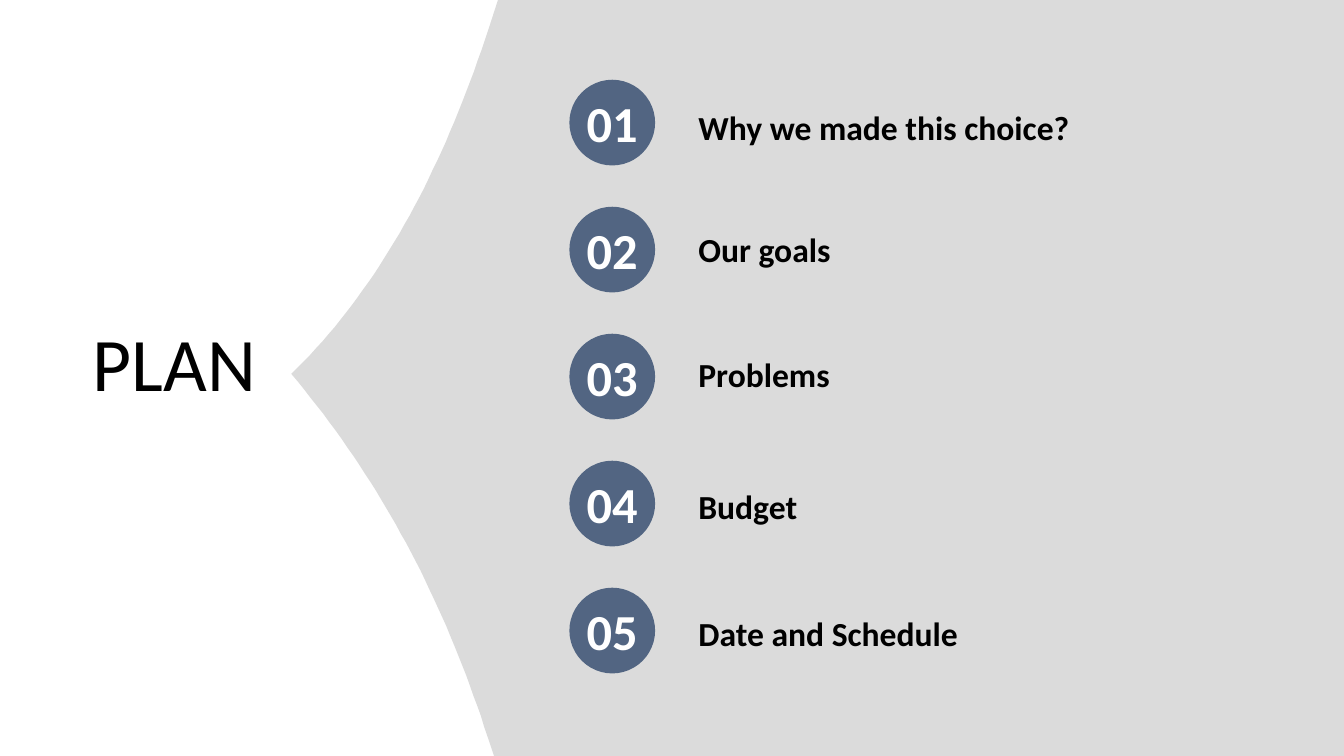
from dataclasses import dataclass

from lxml.etree import SubElement
from pptx import Presentation
from pptx.dml.color import RGBColor
from pptx.enum.shapes import MSO_SHAPE as Shape
from pptx.enum.text import MSO_ANCHOR as Anchor, MSO_AUTO_SIZE as Fit, PP_ALIGN as Align
from pptx.oxml.ns import qn
from pptx.util import Cm, Pt

Point = tuple[float, float]


@dataclass(frozen=True)
class Theme:
    font: str = "Calibri"
    ink: str = "000000"
    light: str = "FFFFFF"
    panel: str = "DBDBDB"
    badge: str = "526582"
    title: float = 54
    number: float = 36
    label: float = 24
    leading: float = 1.22  # line height of the font, in ems


@dataclass(frozen=True)
class Step:
    label: str
    top: float  # top of the label, in cm


THEME = Theme()
WIDTH, HEIGHT = 33.87, 19.05
STEPS = [
    Step("Why we made this choice?", 2.57),
    Step("Our goals", 5.66),
    Step("Problems", 8.81),
    Step("Budget", 12.17),
    Step("Date and Schedule", 15.39),
]
BADGE_LEFT, BADGE_TOP, BADGE_SIZE, PITCH = 14.35, 2.01, 2.16, 3.2


def place(shape, left: float, top: float, width: float, height: float) -> None:
    shape.left, shape.top = Cm(left), Cm(top)
    shape.width, shape.height = Cm(width), Cm(height)


def style(para, size: float, color: str, bold: bool, align: Align) -> None:
    para.alignment = align
    for run in para.runs:
        font = run.font
        font.name, font.size, font.bold = THEME.font, Pt(size), bold
        font.color.rgb = RGBColor.from_string(color)


def paint(shape, color: str) -> None:
    shape.shadow.inherit = False
    shape.fill.solid()
    shape.fill.fore_color.rgb = RGBColor.from_string(color)
    shape.line.fill.background()


def curve(a: Point, b: Point, c: Point, d: Point, count: int = 40) -> list[Point]:
    """Points along a cubic Bezier curve, without its start."""
    points = []
    for i in range(1, count + 1):
        t = i / count
        u = 1 - t
        mix = (u**3, 3 * u * u * t, 3 * u * t * t, t**3)
        points.append(tuple(sum(m * p[k] for m, p in zip(mix, (a, b, c, d))) for k in (0, 1)))
    return points


def add_panel(slide) -> None:
    low, tip, high = (12.29, 18.57), (7.34, 9.42), (12.32, 0.71)
    points = [(12.55, 0), (WIDTH, 0), (WIDTH, HEIGHT), (12.45, HEIGHT), low]
    points += curve(low, (11.15, 15.04), (9.58, 12.09), tip)
    points += curve(tip, (9.5, 7.34), (11.13, 4.37), high)
    grid = [(x * 100, y * 100) for x, y in points]
    build = slide.shapes.build_freeform(*grid[0], scale=Cm(0.01))
    build.add_line_segments(grid[1:], close=True)
    panel = build.convert_to_shape()
    paint(panel, THEME.panel)
    panel.element.getparent().insert(2, panel.element)  # send to back


def add_title(slide) -> None:
    title = slide.shapes.title
    place(title, 2.08, 7.82, 9.7, 2.57)
    frame = title.text_frame
    frame.text = "PLAN"
    frame.auto_size, frame.vertical_anchor = Fit.NONE, Anchor.MIDDLE
    style(frame.paragraphs[0], THEME.title, THEME.ink, False, Align.LEFT)


def add_list(slide, steps: list[Step]) -> None:
    body = slide.placeholders[1]
    place(body, 17.3, steps[0].top, 14.22, 14.1)
    frame = body.text_frame
    frame.text = "\n".join(step.label for step in steps)
    frame.auto_size, frame.vertical_anchor = Fit.NONE, Anchor.TOP
    frame.margin_left = frame.margin_right = Cm(0.3)
    frame.margin_top = frame.margin_bottom = Cm(0.13)
    line = THEME.label * THEME.leading
    last = None
    for para, step in zip(frame.paragraphs, steps):
        gap = Cm(step.top - last.top).pt - line if last else 0
        para.space_before, para.space_after = Pt(gap), Pt(0)
        para.line_spacing = 1.0
        style(para, THEME.label, THEME.ink, True, Align.LEFT)
        props = para._p.get_or_add_pPr()
        props.set("marL", "0")
        props.set("indent", "0")
        SubElement(props, qn("a:buNone"))
        last = step


def add_badge(slide, index: int) -> None:
    size = Cm(BADGE_SIZE)
    badge = slide.shapes.add_shape(
        Shape.OVAL, Cm(BADGE_LEFT), Cm(BADGE_TOP + index * PITCH), size, size)
    paint(badge, THEME.badge)
    frame = badge.text_frame
    frame.text = f"{index + 1:02}"
    frame.word_wrap, frame.vertical_anchor = False, Anchor.MIDDLE
    frame.margin_left = frame.margin_right = frame.margin_top = frame.margin_bottom = 0
    style(frame.paragraphs[0], THEME.number, THEME.light, True, Align.CENTER)


def main() -> None:
    deck = Presentation()
    deck.slide_width, deck.slide_height = Cm(WIDTH), Cm(HEIGHT)
    slide = deck.slides.add_slide(deck.slide_layouts[1])
    add_panel(slide)
    add_title(slide)
    add_list(slide, STEPS)
    for index in range(len(STEPS)):
        add_badge(slide, index)
    deck.save("out.pptx")


if __name__ == "__main__":
    main()
